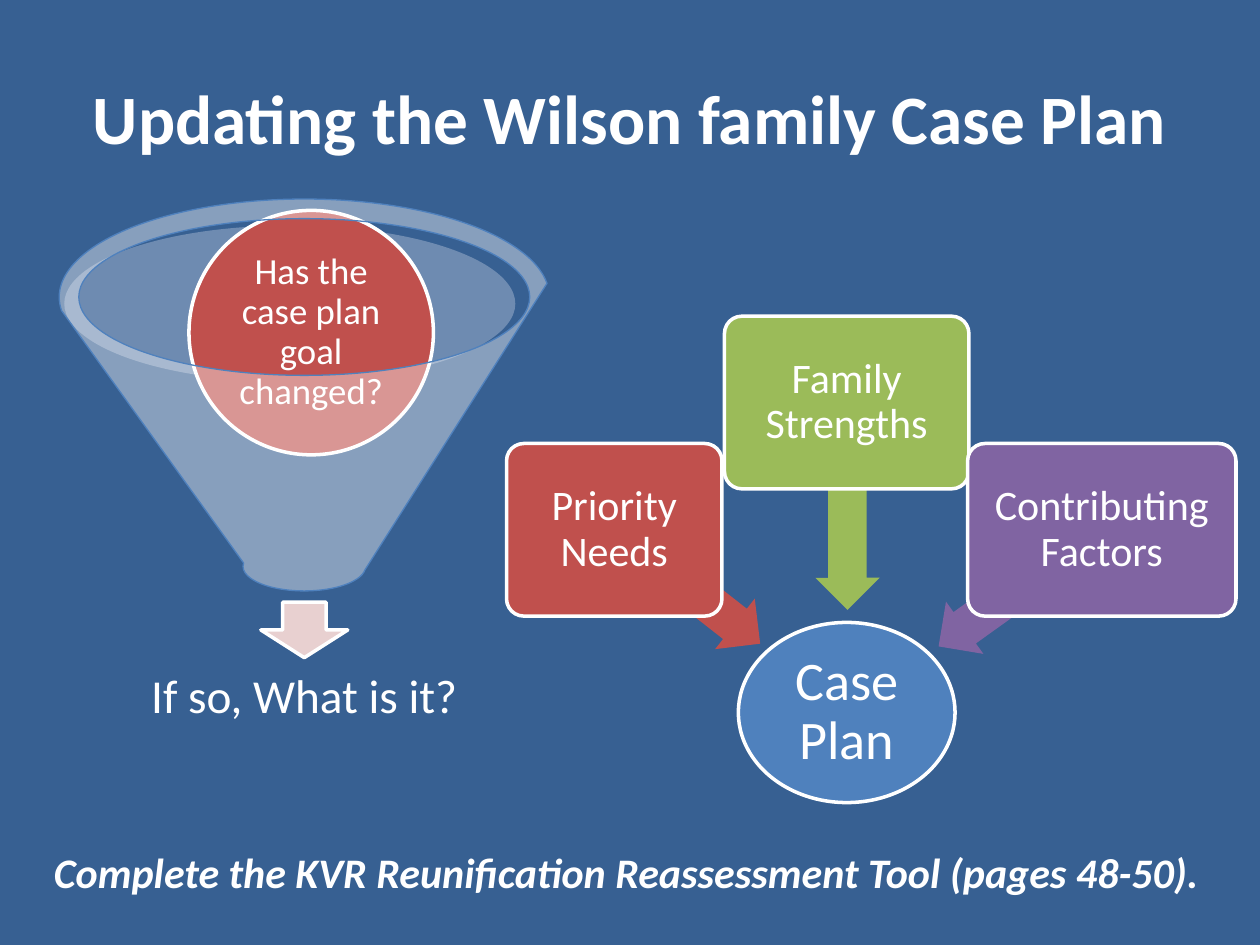
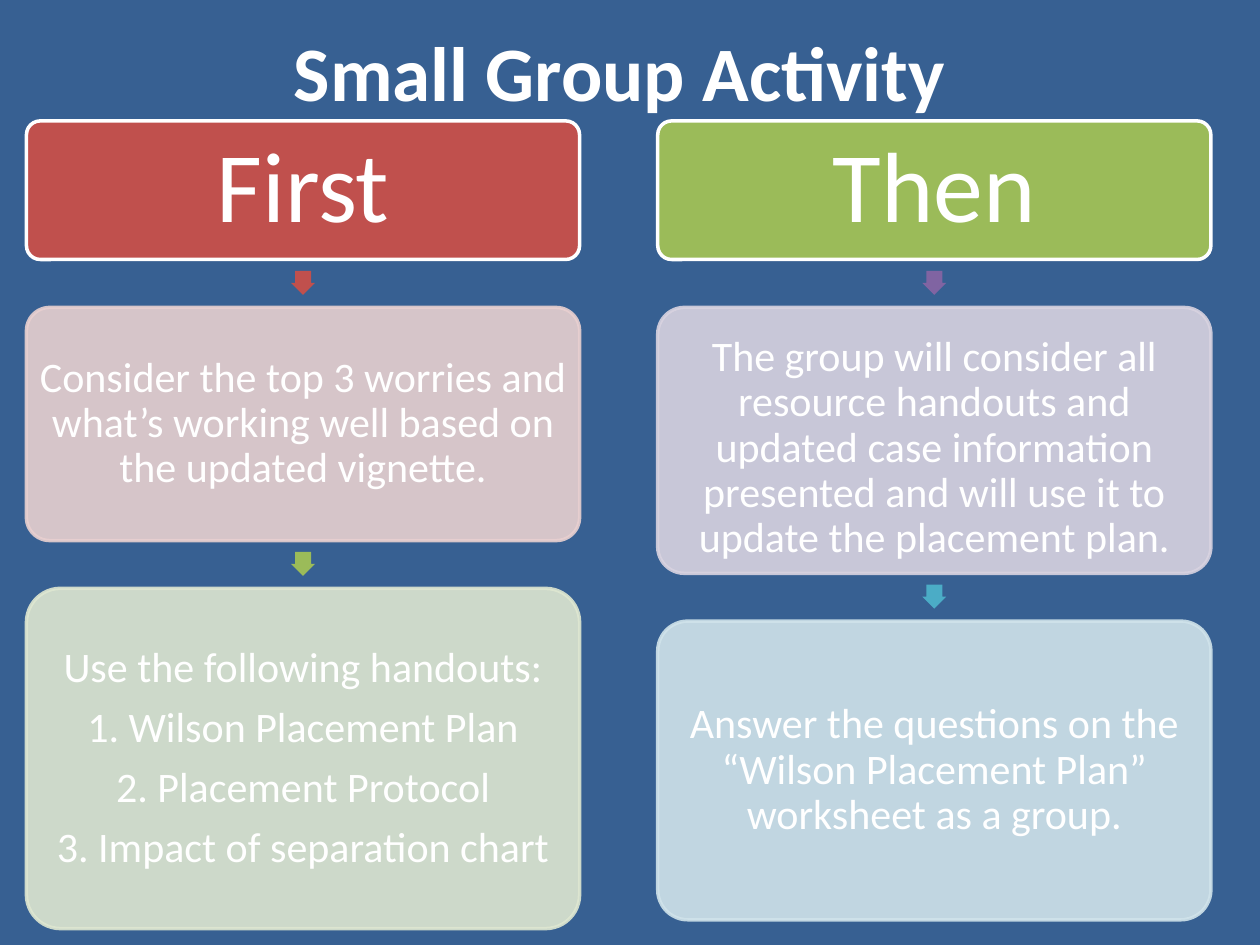
from dataclasses import dataclass

from lxml.etree import SubElement
from pptx import Presentation
from pptx.dml.color import RGBColor
from pptx.enum.shapes import MSO_SHAPE as Preset
from pptx.enum.text import MSO_ANCHOR as Anchor, MSO_AUTO_SIZE as AutoSize, PP_ALIGN as Align
from pptx.oxml.ns import qn
from pptx.presentation import Presentation as Deck
from pptx.shapes.autoshape import Shape
from pptx.slide import Slide
from pptx.text.text import TextFrame
from pptx.util import Emu, Pt

EMU_PER_PX = 9144  # 100 px to the inch


@dataclass(frozen=True)
class Theme:
    font: str = "Calibri"
    background: str = "376092"
    white: str = "FFFFFF"
    blue: str = "4F81BD"
    red: str = "C0504D"
    green: str = "9BBB59"
    purple: str = "8064A2"
    teal: str = "4BACC6"
    mist: str = "C2CDE1"
    pale_red: str = "E8D0D0"
    pale_green: str = "DEE7D1"
    pale_purple: str = "D8D3E0"
    pale_teal: str = "D0E3EA"
    long_title: float = 39.6
    title: float = 44
    heading: float = 57
    plan: float = 31
    answer: float = 27
    body: float = 24
    question: float = 21
    outline: float = 2
    thin_outline: float = 0.75


THEME = Theme()


@dataclass(frozen=True)
class Area:
    left: int
    top: int
    width: int
    height: int

    def emu(self) -> tuple[Emu, ...]:
        sides = (self.left, self.top, self.width, self.height)
        return tuple(Emu(side * EMU_PER_PX) for side in sides)


@dataclass(frozen=True)
class Label:
    lines: tuple[str, ...]
    size: float = THEME.body
    inset: int = 5
    anchor: Anchor = Anchor.MIDDLE


@dataclass(frozen=True)
class Figure:
    preset: Preset
    area: Area
    fill: str
    line: str | None = None
    line_width: float = THEME.outline
    opacity: int = 100
    rotation: float = 0
    adjustments: tuple[float, ...] = ()
    label: Label | None = None


@dataclass(frozen=True)
class Step:
    height: int
    fill: str
    label: Label
    line: str
    opacity: int = 100


@dataclass(frozen=True)
class Column:
    left: int
    steps: tuple[Step, ...]
    arrow_colors: tuple[str, ...]


def style_text(frame: TextFrame, lines: tuple[str, ...], size: float,
               bold: bool = False, italic: bool = False) -> None:
    frame.word_wrap = True
    frame.auto_size = AutoSize.NONE
    frame.text = "\n".join(lines)
    for para in frame.paragraphs:
        font = para.font
        font.name, font.size = THEME.font, Pt(size)
        font.bold, font.italic = bold, italic
        font.color.rgb = RGBColor.from_string(THEME.white)


def write_label(frame: TextFrame, label: Label) -> None:
    """Fill a frame with centred, tightly set diagram text."""
    style_text(frame, label.lines, label.size)
    frame.vertical_anchor = label.anchor
    inset = Emu(label.inset * EMU_PER_PX)
    frame.margin_left = frame.margin_right = inset
    frame.margin_top = frame.margin_bottom = inset
    for para in frame.paragraphs:
        para.alignment = Align.CENTER
        para.line_spacing = 0.9
        para.space_after = Pt(label.size * 0.35)


def set_opacity(shape: Shape, color: str, percent: int) -> None:
    """Make the fill, and an outline of the same color, see-through."""
    for node in shape.element.spPr.iter(qn("a:srgbClr")):
        if node.get("val") == color:
            SubElement(node, qn("a:alpha"), val=str(percent * 1000))


def draw_figure(slide: Slide, figure: Figure) -> None:
    shape = slide.shapes.add_shape(figure.preset, *figure.area.emu())
    shape.shadow.inherit = False
    shape.rotation = figure.rotation
    for index, value in enumerate(figure.adjustments):
        shape.adjustments[index] = value
    shape.fill.solid()
    shape.fill.fore_color.rgb = RGBColor.from_string(figure.fill)
    if figure.line:
        shape.line.color.rgb = RGBColor.from_string(figure.line)
        shape.line.width = Pt(figure.line_width)
    else:
        shape.line.fill.background()
    if figure.opacity < 100:
        set_opacity(shape, figure.fill, figure.opacity)
    if figure.label:
        write_label(shape.text_frame, figure.label)


def add_text_box(slide: Slide, area: Area) -> TextFrame:
    return slide.shapes.add_textbox(*area.emu()).text_frame


def add_titled_slide(deck: Deck, title: str, area: Area, size: float) -> Slide:
    slide = deck.slides.add_slide(deck.slide_layouts.get_by_name("Title Only"))
    holder = slide.shapes.title
    holder.left, holder.top, holder.width, holder.height = area.emu()
    frame = holder.text_frame
    style_text(frame, (title,), size, bold=True)
    frame.vertical_anchor = Anchor.MIDDLE
    frame.paragraphs[0].alignment = Align.CENTER
    return slide


def draw_funnel(slide: Slide) -> None:
    question = Label(("Has the case plan goal changed?",), THEME.question, 3)
    draw_figure(slide, Figure(Preset.OVAL, Area(51, 179, 358, 124), THEME.mist, opacity=40))
    draw_figure(slide, Figure(Preset.DOWN_ARROW, Area(207, 478, 69, 44),
                              THEME.pale_red, THEME.white))
    write_label(add_text_box(slide, Area(75, 513, 333, 83)),
                Label(("If so, What is it?",), THEME.answer, 21))
    draw_figure(slide, Figure(Preset.OVAL, Area(150, 167, 194, 194),
                              THEME.red, THEME.white, label=question))
    draw_figure(slide, Figure(Preset.FUNNEL, Area(47, 158, 389, 311), THEME.white,
                              THEME.blue, THEME.thin_outline, opacity=40))


def draw_plan_inputs(slide: Slide) -> None:
    """Draw the case plan and the three boxes whose arrows lead into it."""
    draw_figure(slide, Figure(Preset.OVAL, Area(586, 494, 172, 143), THEME.blue, THEME.white,
                              label=Label(("Case Plan",), THEME.plan, 2)))
    inputs = (
        ("Priority Needs", THEME.red, Area(402, 352, 171, 137), Area(472, 440, 147, 51), 218.1),
        ("Family Strengths", THEME.green, Area(575, 251, 194, 137),
         Area(590, 376, 165, 51), 269.9),
        ("Contributing Factors", THEME.purple, Area(768, 352, 213, 137),
         Area(730, 441, 160, 51), 324.4),
    )
    for text, color, box, arrow, angle in inputs:
        draw_figure(slide, Figure(Preset.LEFT_ARROW, arrow, color, rotation=angle,
                                  adjustments=(0.6, 0.5)))
        draw_figure(slide, Figure(Preset.ROUNDED_RECTANGLE, box, color, THEME.white,
                                  adjustments=(0.1,), label=Label((text,))))


def draw_column(slide: Slide, column: Column) -> None:
    """Stack the steps downward with an arrow centred in each gap."""
    top, width, gap, arrow = 96, 439, 38, 19
    for index, step in enumerate(column.steps):
        if index:
            spot = Area(column.left + (width - arrow) // 2,
                        top - gap + (gap - arrow) // 2, arrow, arrow)
            draw_figure(slide, Figure(Preset.RIGHT_ARROW, spot, column.arrow_colors[index - 1],
                                      rotation=90, adjustments=(0.667, 0.5)))
        draw_figure(slide, Figure(Preset.ROUNDED_RECTANGLE,
                                  Area(column.left, top, width, step.height),
                                  step.fill, step.line, opacity=step.opacity,
                                  adjustments=(0.1,), label=step.label))
        top += step.height + gap


def heading_step(text: str, color: str) -> Step:
    return Step(110, color, Label((text,), THEME.heading, 8), THEME.white)


def detail_step(height: int, color: str, *lines: str, anchor: Anchor = Anchor.MIDDLE) -> Step:
    return Step(height, color, Label(lines, inset=3, anchor=anchor), color, 90)


def build_case_plan_slide(deck: Deck) -> None:
    slide = add_titled_slide(deck, "Updating the Wilson family Case Plan",
                             Area(50, 30, 900, 125), THEME.long_title)
    draw_funnel(slide)
    draw_plan_inputs(slide)
    reminder = add_text_box(slide, Area(33, 667, 950, 50))
    style_text(reminder, ("Complete the KVR Reunification Reassessment Tool (pages 48-50).",),
               THEME.body, bold=True, italic=True)


def build_activity_slide(deck: Deck) -> None:
    slide = add_titled_slide(deck, "Small Group Activity", Area(42, 12, 900, 88), THEME.title)
    first = Column(21, (
        heading_step("First", THEME.red),
        detail_step(185, THEME.pale_red, "Consider the top 3 worries and what’s working well "
                    "based on the updated vignette."),
        detail_step(270, THEME.pale_green, "Use the following handouts:",
                    "1. Wilson Placement Plan", "2. Placement Protocol",
                    "3. Impact of separation chart"),
    ), (THEME.red, THEME.green))
    then = Column(522, (
        heading_step("Then", THEME.green),
        detail_step(211, THEME.pale_purple, "The group will consider all resource handouts and "
                    "updated case information presented and will use it to update the "
                    "placement plan.", anchor=Anchor.BOTTOM),
        detail_step(237, THEME.pale_teal, "Answer the questions on the “Wilson Placement Plan” "
                    "worksheet as a group."),
    ), (THEME.purple, THEME.teal))
    for column in (first, then):
        draw_column(slide, column)


def main() -> None:
    deck = Presentation()
    deck.slide_width, deck.slide_height = Emu(1000 * EMU_PER_PX), Emu(750 * EMU_PER_PX)
    backdrop = deck.slide_master.background.fill
    backdrop.solid()
    backdrop.fore_color.rgb = RGBColor.from_string(THEME.background)
    build_case_plan_slide(deck)
    build_activity_slide(deck)
    deck.save("out.pptx")


if __name__ == "__main__":
    main()
